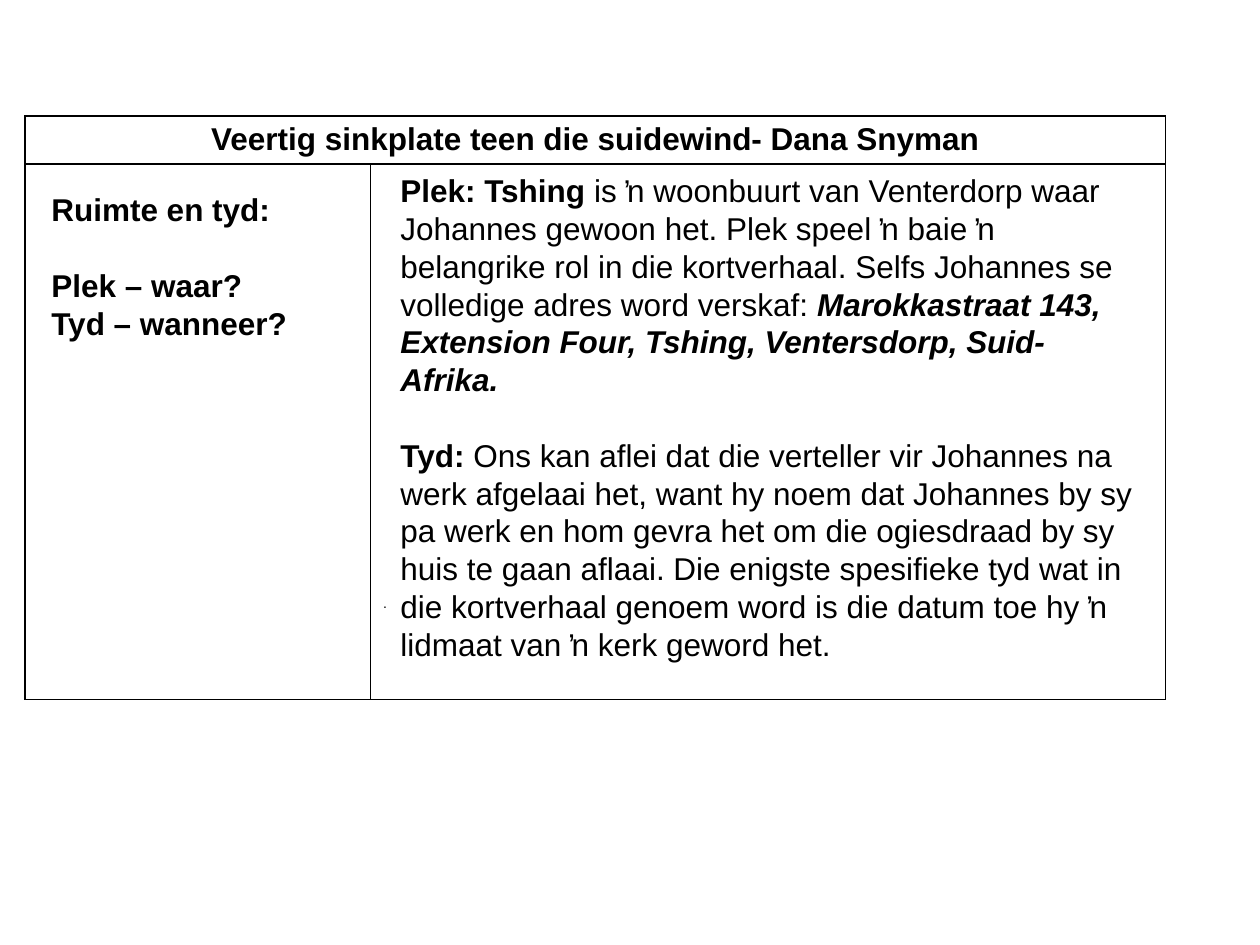
from pptx import Presentation
from pptx.dml.color import RGBColor
from pptx.enum.text import MSO_ANCHOR, PP_ALIGN
from pptx.oxml import parse_xml
from pptx.oxml.ns import nsdecls
from pptx.util import Inches, Pt

CENTER = PP_ALIGN.CENTER
BOTTOM = MSO_ANCHOR.BOTTOM
INK = "000000"
LINE = Pt(21.6)
BOLD = {"bold": True}
PLAIN = {"bold": False}
SLOPE = {"bold": True, "italic": True}


def add_run(para, text, style, size=18):
    run = para.add_run()
    run.text = text
    look = {"name": "Arial", "size": Pt(size), **style}
    for key, value in look.items():
        setattr(run.font, key, value)
    run.font.color.rgb = RGBColor.from_string(INK)


prs = Presentation()
prs.slide_width, prs.slide_height = Inches(10), Inches(7.5)
slide = prs.slides.add_slide(prs.slide_layouts[6])

# Table grid with a merged heading row
frame = slide.shapes.add_table(2, 2, Inches(0.2), Inches(0.92), Inches(9.05), Inches(4.63))
table = frame.table
for col, width in zip(table.columns, (2.74, 6.31)):
    col.width = Inches(width)
for row, height in zip(table.rows, (0.38, 4.25)):
    row.height = Inches(height)
for cell in table.iter_cells():
    cell.fill.background()
    props = cell._tc.get_or_add_tcPr()
    for spot, side in enumerate(("lnL", "lnR", "lnT", "lnB")):
        props.insert(spot, parse_xml(
            f'<a:{side} {nsdecls("a")} w="12700"><a:solidFill>'
            f'<a:srgbClr val="{INK}"/></a:solidFill></a:{side}>'))
table.cell(0, 0).merge(table.cell(0, 1))

head = table.cell(0, 0).text_frame.paragraphs[0]
head.alignment = CENTER
add_run(head, "Veertig sinkplate teen die suidewind- Dana Snyman", BOLD)

# Small full stop low in the right cell
cell = table.cell(1, 1)
cell.vertical_anchor = BOTTOM
cell.margin_bottom = Inches(0.7)
add_run(cell.text_frame.paragraphs[0], ".", PLAIN, 8)

# Text over the two lower cells: place, then (gap before, runs) per paragraph
boxes = [
    ((0.31, 1.46, 2.36, 1.31), [
        (0, [("Ruimte en tyd:", BOLD)]),
        (LINE, [("Plek – waar?", BOLD)]),
        (0, [("Tyd – wanneer?", BOLD)]),
    ]),
    ((3.08, 1.31, 6.06, 4.04), [
        (0, [
            ("Plek: Tshing", BOLD),
            (" is ŉ woonbuurt van Venterdorp waar Johannes gewoon het. "
             "Plek speel ŉ baie ŉ belangrike rol in die kortverhaal. "
             "Selfs Johannes se volledige adres word verskaf: ", PLAIN),
            ("Marokkastraat 143, Extension Four, Tshing, Ventersdorp, "
             "Suid-Afrika.", SLOPE),
        ]),
        (LINE, [
            ("Tyd: ", BOLD),
            ("Ons kan aflei dat die verteller vir Johannes na werk afgelaai het, "
             "want hy noem dat Johannes by sy pa werk en hom gevra het om die "
             "ogiesdraad by sy huis te gaan aflaai. Die enigste spesifieke tyd "
             "wat in die kortverhaal genoem word is die datum toe hy ŉ lidmaat "
             "van ŉ kerk geword het.", PLAIN),
        ]),
    ]),
]
for place, paras in boxes:
    text = slide.shapes.add_textbox(*map(Inches, place)).text_frame
    text.word_wrap = True
    for num, (gap, runs) in enumerate(paras):
        para = text.add_paragraph() if num else text.paragraphs[0]
        para.line_spacing = LINE
        if gap:
            para.space_before = gap
        for words, style in runs:
            add_run(para, words, style)

prs.save("out.pptx")
